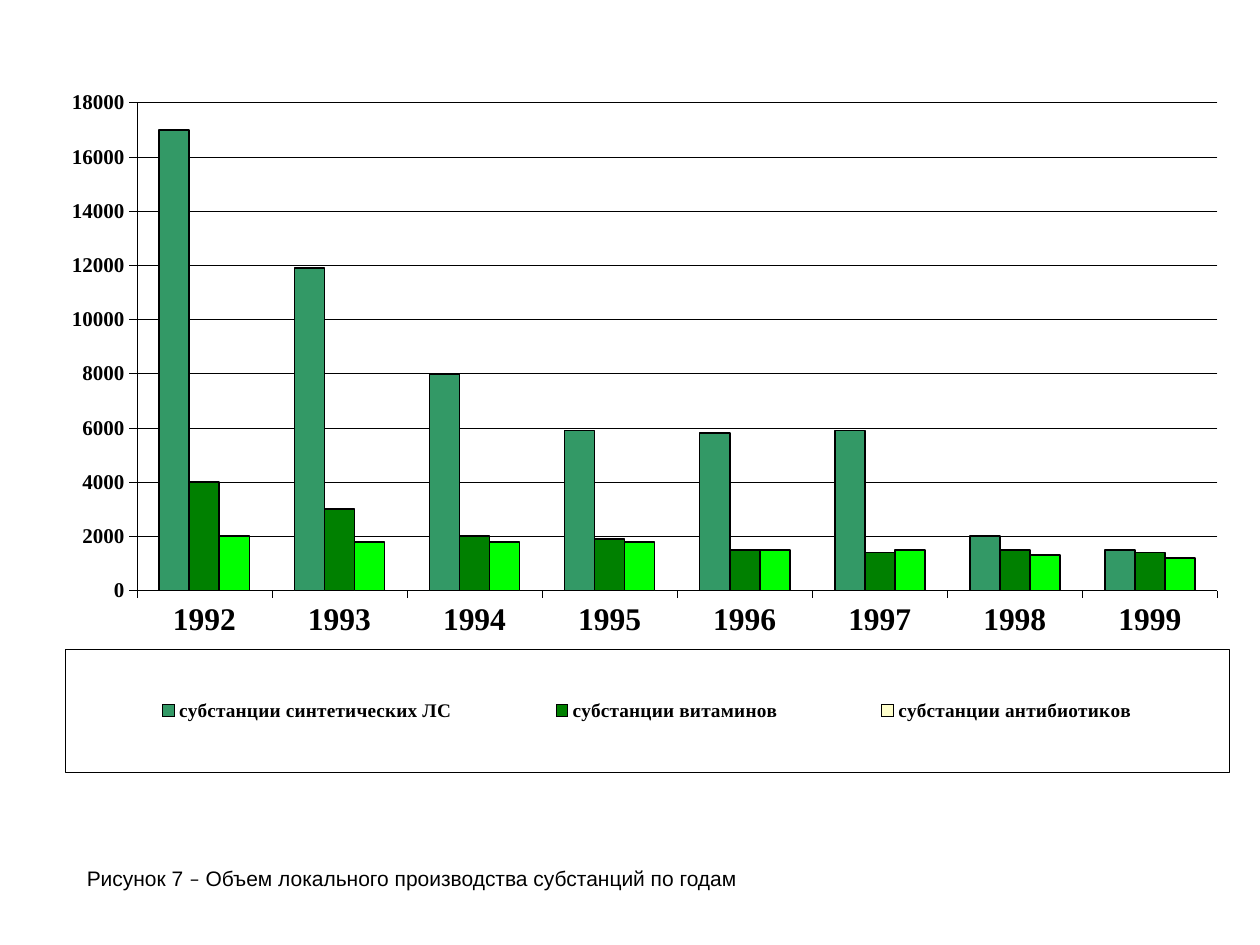
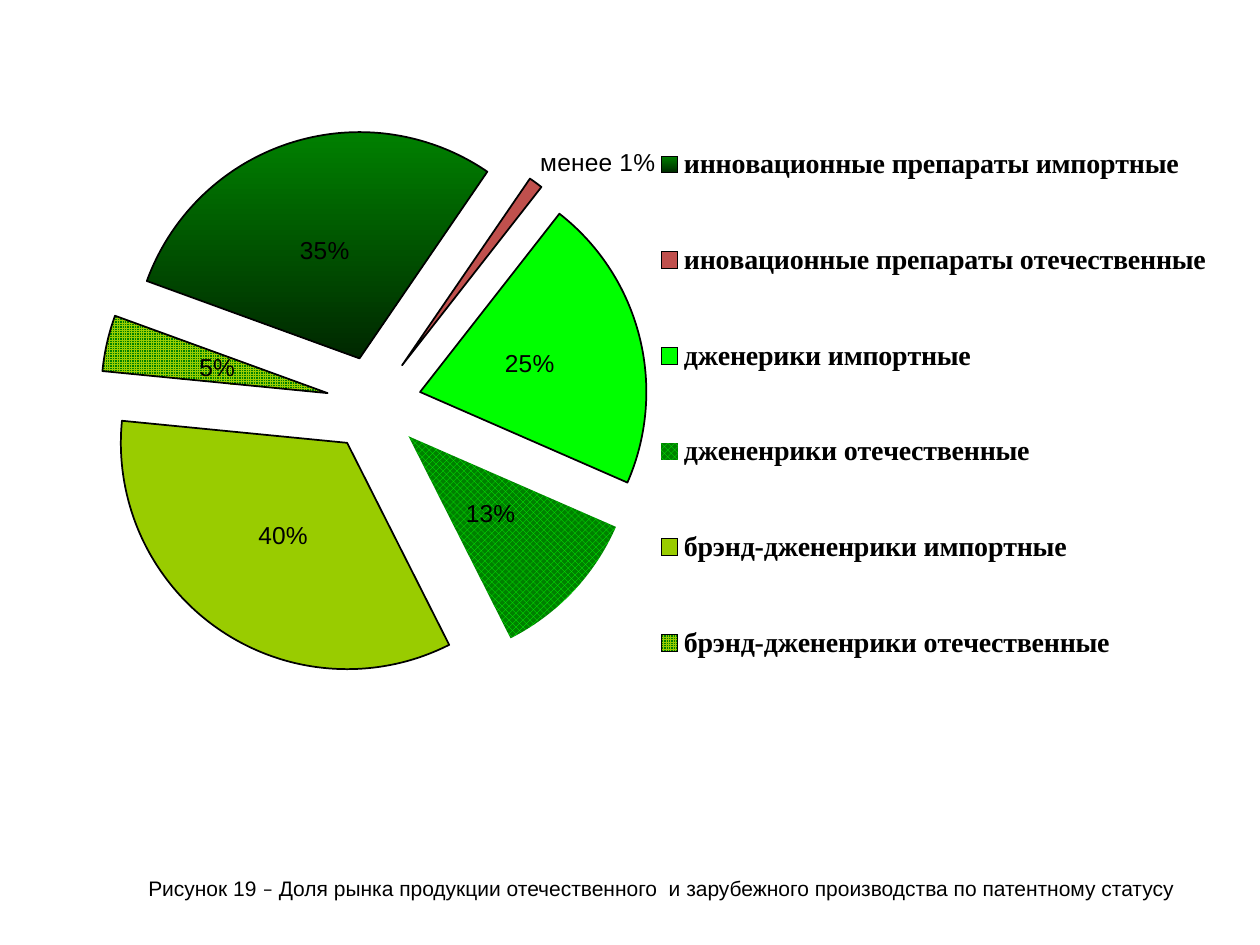
from lxml import etree
from pptx import Presentation
from pptx.chart.data import CategoryChartData
from pptx.dml.color import RGBColor
from pptx.enum.chart import XL_CHART_TYPE, XL_LABEL_POSITION, XL_LEGEND_POSITION, XL_TICK_MARK
from pptx.enum.dml import MSO_PATTERN
from pptx.enum.text import MSO_ANCHOR, PP_ALIGN
from pptx.oxml.ns import qn
from pptx.util import Cm, Pt

COLUMNS, PIE = XL_CHART_TYPE.COLUMN_CLUSTERED, XL_CHART_TYPE.PIE
BOTTOM, RIGHT = XL_LEGEND_POSITION.BOTTOM, XL_LEGEND_POSITION.RIGHT
TICK_OUT = XL_TICK_MARK.OUTSIDE
CENTER, OUTSIDE_END = XL_LABEL_POSITION.CENTER, XL_LABEL_POSITION.OUTSIDE_END
DIAMONDS, SMALL_GRID = MSO_PATTERN.SOLID_DIAMOND, MSO_PATTERN.SMALL_GRID
MIDDLE, JUSTIFY = MSO_ANCHOR.MIDDLE, PP_ALIGN.JUSTIFY

BLACK, GREEN, LIME, OLIVE = "000000", "008000", "00FF00", "99CC00"
SERIF, SANS, DASH_FONT = "Times New Roman", "Arial", "Calibri"

YEARS = [str(year) for year in range(1992, 2000)]
SUBSTANCES = [
    ("субстанции синтетических ЛС", "339966", None,
     [17000, 11900, 8000, 5900, 5800, 5900, 2000, 1500]),
    ("субстанции витаминов", GREEN, None,
     [4000, 3000, 2000, 1900, 1500, 1400, 1500, 1400]),
    ("субстанции антибиотиков", "FFFFCC", LIME,
     [2000, 1800, 1800, 1800, 1500, 1500, 1300, 1200]),
]
MARKET_SHARES = [
    ("инновационные препараты импортные", 29, "35%", ("gradient", GREEN, "002800")),
    ("иновационные препараты отечественные", 1, "менее 1%", ("solid", "C0504D")),
    ("дженерики импортные", 21, "25%", ("solid", LIME)),
    ("джененрики отечественные", 11, "13%", ("pattern", LIME, GREEN, DIAMONDS)),
    ("брэнд-джененрики импортные", 34, "40%", ("solid", OLIVE)),
    ("брэнд-джененрики отечественные", 4, "5%", ("pattern", OLIVE, GREEN, SMALL_GRID)),
]
UNOUTLINED = "13%"
PRODUCTION_CAPTION = ("Рисунок 7 ", " Объем локального производства субстанций по годам")
SHARES_CAPTION = (
    "Рисунок 19 ",
    " Доля рынка продукции отечественного  и зарубежного производства по патентному статусу",
)


def rgb(value):
    return RGBColor.from_string(value)


def style_font(font, size, name=SERIF, bold=True):
    font.size, font.name, font.bold = Pt(size), name, bold
    font.color.rgb = rgb(BLACK)


def outline(line, width):
    line.color.rgb = rgb(BLACK)
    line.width = Pt(width)


def solid(fill, color):
    fill.solid()
    fill.fore_color.rgb = rgb(color)


def paint(fill, kind, first, second=None, pattern=None):
    if kind == "solid":
        solid(fill, first)
    elif kind == "gradient":
        fill.gradient()
        fill.gradient_angle = 270
        for stop, color in zip(fill.gradient_stops, (first, second)):
            stop.color.rgb = rgb(color)
    else:
        fill.patterned()
        fill.pattern = pattern
        fill.fore_color.rgb = rgb(first)
        fill.back_color.rgb = rgb(second)


def place(part, bounds, inner=False):
    for old in part.findall(qn("c:layout")):
        part.remove(old)
    layout = etree.Element(qn("c:layout"))
    manual = etree.SubElement(layout, qn("c:manualLayout"))
    settings = [("layoutTarget", "inner")] if inner else []
    settings += [("xMode", "edge"), ("yMode", "edge"), *zip("xywh", bounds)]
    for tag, value in settings:
        etree.SubElement(manual, qn(f"c:{tag}")).set("val", str(value))
    part.insert(0 if inner else 1, layout)


def add_chart(slide, kind, box, data, plot_bounds, legend_side, legend_bounds, legend_size):
    chart = slide.shapes.add_chart(kind, *map(Cm, box), data).chart
    style_font(chart.font, 12)
    chart.has_title = False
    chart.has_legend = True
    chart.legend.position = legend_side
    chart.legend.include_in_layout = False
    style_font(chart.legend.font, legend_size)
    place(chart.element.xpath("c:chart/c:plotArea")[0], plot_bounds, inner=True)
    place(chart.element.xpath("c:chart/c:legend")[0], legend_bounds)
    return chart


def add_caption(slide, box, caption):
    frame = slide.shapes.add_textbox(*map(Cm, box)).text_frame
    frame.word_wrap = True
    frame.vertical_anchor = MIDDLE
    paragraph = frame.paragraphs[0]
    paragraph.alignment = JUSTIFY
    paragraph._p.get_or_add_pPr().set("indent", str(Cm(1.5)))
    paragraph.font.size = Pt(12)
    paragraph.font.color.rgb = rgb(BLACK)
    number, subject = caption
    for text, name in ((number, SANS), ("–", DASH_FONT), (subject, SANS)):
        run = paragraph.add_run()
        run.text, run.font.name = text, name


def build_production(slide):
    data = CategoryChartData()
    data.categories = YEARS
    for name, _, _, tons in SUBSTANCES:
        data.add_series(name, tons)
    chart = add_chart(slide, COLUMNS, (0.58, 1.19, 24.21, 14.68), data,
                      (0.09, 0.06, 0.9, 0.67), BOTTOM, (0.03, 0.81, 0.97, 0.17), 11)
    plot = chart.plots[0]
    plot.vary_by_categories = False
    plot.gap_width, plot.overlap = 150, 0
    for axis, size in ((chart.category_axis, 18), (chart.value_axis, 12)):
        axis.major_tick_mark = TICK_OUT
        style_font(axis.tick_labels.font, size)
        outline(axis.format.line, 0.25)
    amounts = chart.value_axis
    amounts.minimum_scale, amounts.maximum_scale, amounts.major_unit = 0, 18000, 2000
    outline(amounts.major_gridlines.format.line, 0.25)
    for series, (_, color, bar_color, tons) in zip(plot.series, SUBSTANCES):
        series.invert_if_negative = False
        solid(series.format.fill, color)
        outline(series.format.line, 1)
        if bar_color:
            for index in range(len(tons)):
                bar = series.points[index].format
                solid(bar.fill, bar_color)
                outline(bar.line, 1)
    legend = chart.element.xpath("c:chart/c:legend")[0]
    border = etree.Element(qn("c:spPr"))
    line = etree.SubElement(border, qn("a:ln"), w=str(Pt(0.25)))
    fill = etree.SubElement(line, qn("a:solidFill"))
    etree.SubElement(fill, qn("a:srgbClr"), val=BLACK)
    legend.find(qn("c:txPr")).addprevious(border)
    add_caption(slide, (0, 17.07, 25.4, 1.27), PRODUCTION_CAPTION)


def build_shares(slide):
    data = CategoryChartData()
    data.categories = [name for name, *_ in MARKET_SHARES]
    data.add_series("Series 1", [share for _, share, *_ in MARKET_SHARES])
    chart = add_chart(slide, PIE, (0.58, 0.99, 24, 14.3), data,
                      (0.06, 0.05, 0.46, 0.9), RIGHT, (0.52, 0.05, 0.48, 0.9), 16)
    plot = chart.plots[0]
    plot.vary_by_categories = True
    series = plot.series[0]
    outline(series.format.line, 1)
    explosion = etree.Element(qn("c:explosion"), val="21")
    chart.element.xpath(".//c:ser/c:spPr")[0].addnext(explosion)
    labels = series.data_labels
    labels.show_percentage, labels.show_value = True, False
    labels.number_format, labels.number_format_is_linked = "0%", False
    style_font(labels.font, 14, SANS, False)
    for index, (_, share, label, look) in enumerate(MARKET_SHARES):
        point = series.points[index]
        paint(point.format.fill, *look)
        if label == UNOUTLINED:
            point.format.line.fill.background()
        else:
            outline(point.format.line, 1)
        run = point.data_label.text_frame.paragraphs[0].add_run()
        run.text = label
        style_font(run.font, 14, SANS, False)
        point.data_label.position = OUTSIDE_END if share == 1 else CENTER
    pie = chart.element.xpath(".//c:pieChart")[0]
    for old in pie.findall(qn("c:firstSliceAng")):
        pie.remove(old)
    etree.SubElement(pie, qn("c:firstSliceAng"), val="290")
    add_caption(slide, (1.24, 17.53, 23.3, 0.76), SHARES_CAPTION)


def main():
    presentation = Presentation()
    presentation.slide_width, presentation.slide_height = Cm(25.4), Cm(19.05)
    blank = presentation.slide_layouts[6]
    for build in (build_production, build_shares):
        build(presentation.slides.add_slide(blank))
    presentation.save("out.pptx")


if __name__ == "__main__":
    main()
